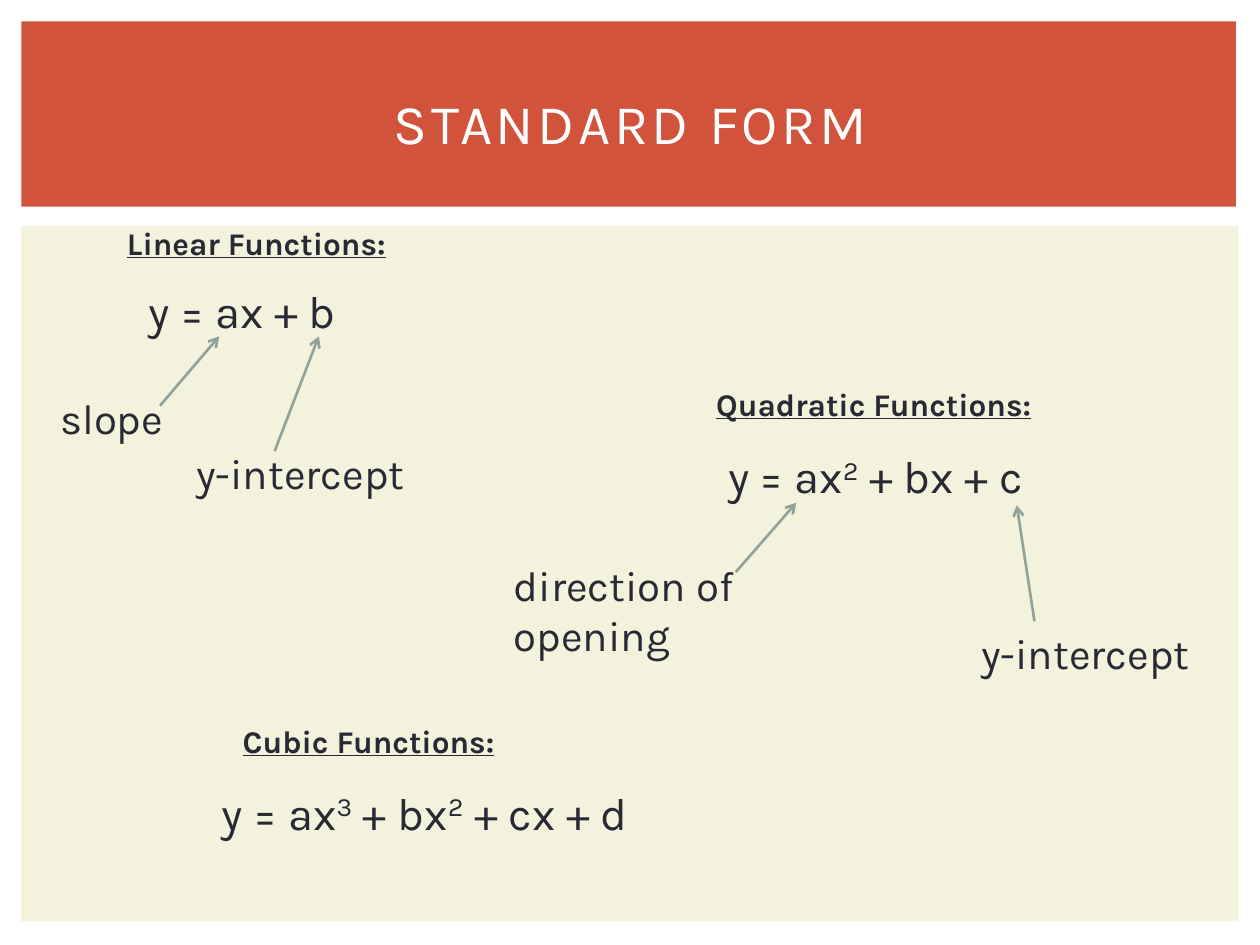
from lxml import etree
from pptx import Presentation
from pptx.dml.color import RGBColor
from pptx.enum.shapes import MSO_CONNECTOR, MSO_SHAPE
from pptx.enum.text import MSO_ANCHOR, MSO_AUTO_SIZE, PP_ALIGN
from pptx.oxml.ns import qn
from pptx.util import Inches, Pt

RECT = MSO_SHAPE.RECTANGLE
LINE = MSO_CONNECTOR.STRAIGHT
MIDDLE = MSO_ANCHOR.MIDDLE
GROW = MSO_AUTO_SIZE.SHAPE_TO_FIT_TEXT
CENTER = PP_ALIGN.CENTER
INK = "292934"


def color(code):
    return RGBColor.from_string(code)


def write(text, left, top, width, height, size, ink=INK):
    box = slide.shapes.add_textbox(Inches(left), Inches(top), Inches(width), Inches(height))
    frame = box.text_frame
    frame.word_wrap = True
    line = frame.paragraphs[0]
    for i, part in enumerate(text.split("^")):
        run = line.add_run()
        run.text = part
        run.font.size = Pt(size)
        run.font.name = "Karla"
        run.font.color.rgb = color(ink)
        if i % 2:
            run._r.get_or_add_rPr().set("baseline", "30000")
    return frame


prs = Presentation()
prs.slide_width = Inches(10)
prs.slide_height = Inches(7.5)
slide = prs.slides.add_slide(prs.slide_layouts[6])

panels = [(1.79, 9.66, 5.52, "F3F2DC"), (0.17, 9.64, 1.47, "D2533C")]
for top, width, height, fill in panels:
    panel = slide.shapes.add_shape(RECT, Inches(0.17), Inches(top), Inches(width), Inches(height))
    panel.shadow.inherit = False
    panel.fill.solid()
    panel.fill.fore_color.rgb = color(fill)
    panel.line.fill.background()

title = write("STANDARD FORM", 0.42, 0.39, 9.17, 1.15, 32, "FFFFFF")
title.vertical_anchor = MIDDLE
title.paragraphs[0].alignment = CENTER
title.paragraphs[0].runs[0]._r.get_or_add_rPr().set("spc", "200")

heads = [
    ("Linear Functions:", -0.08, 1.73),
    ("Quadratic Functions:", 4.82, 3.01),
    ("Cubic Functions:", 0.81, 5.68),
]
for text, left, top in heads:
    head = write(text, left, top, 4.23, 0.4, 18)
    head.auto_size = GROW
    head.paragraphs[0].alignment = CENTER
    font = head.paragraphs[0].runs[0].font
    font.bold = True
    font.underline = True

forms = [
    ("y = ax + b", 1.08, 2.2, 3.07),
    ("y = ax^2^ + bx + c", 5.68, 3.51, 3.07),
    ("y = ax^3^ + bx^2^ + cx + d", 1.66, 6.18, 3.51),
]
for text, left, top, width in forms:
    write(text, left, top, width, 0.54, 26).auto_size = GROW

labels = [
    ("slope", 0.38, 3.07, 2.15),
    ("y-intercept", 1.46, 3.5, 2.15),
    ("y-intercept", 7.69, 4.93, 2.15),
    ("direction of opening", 3.98, 4.39, 3.13),
]
for text, left, top, width in labels:
    write(text, left, top, width, 0.5, 24).auto_size = GROW

arrows = [
    (1.27, 3.22, 1.74, 2.67),
    (2.18, 3.58, 2.53, 2.67),
    (8.21, 4.93, 8.07, 4.01),
    (5.84, 4.54, 6.32, 3.99),
]
for ends in arrows:
    arrow = slide.shapes.add_connector(LINE, *[Inches(n) for n in ends])
    arrow.line.color.rgb = color("93A299")
    arrow.line.width = Pt(1.5)
    etree.SubElement(arrow.line._get_or_add_ln(), qn("a:tailEnd"), type="arrow")
    etree.SubElement(arrow._element.spPr, qn("a:effectLst"))

prs.save("out.pptx")
